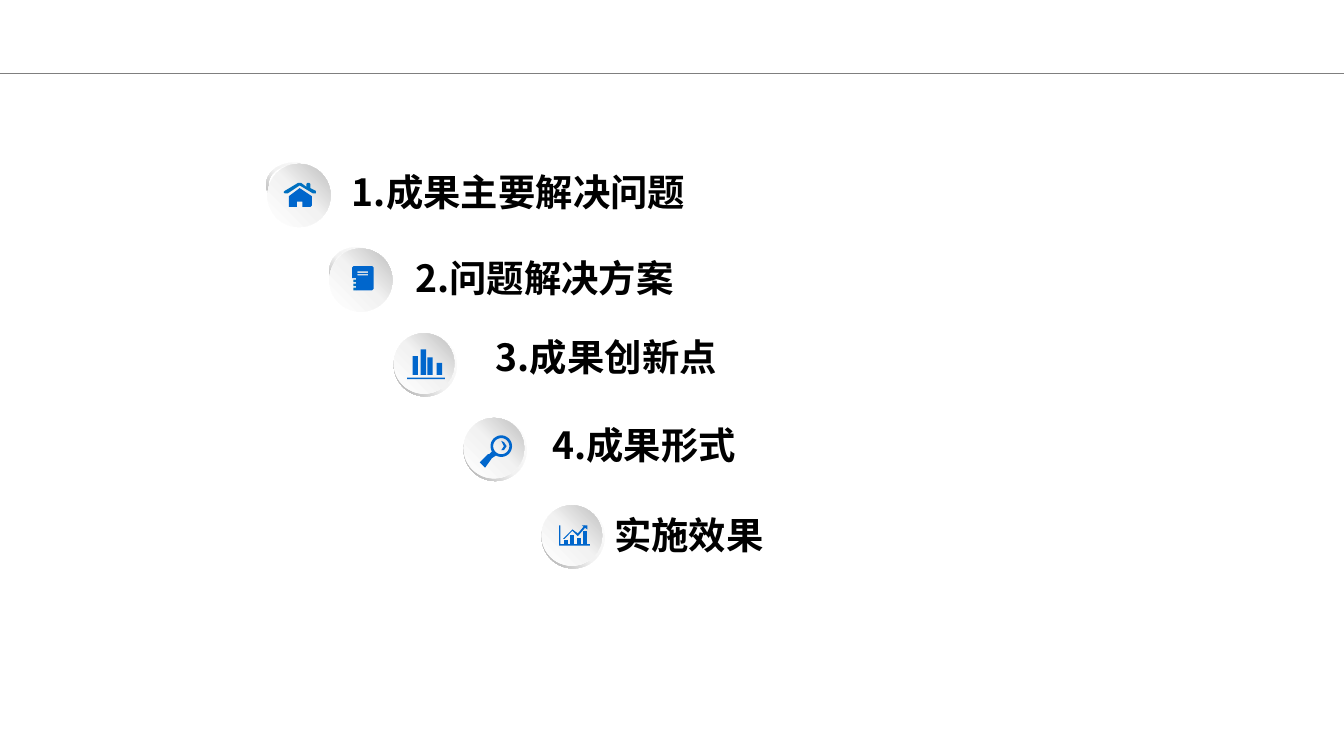
"""Build a contents slide with five staggered entries, each led by a round icon badge."""
from copy import deepcopy
from dataclasses import dataclass
from math import cos, pi, sin

from pptx import Presentation
from pptx import util as u
from pptx.dml.color import RGBColor
from pptx.enum import shapes
from pptx.oxml import ns
from pptx.shapes.autoshape import Shape
from pptx.shapes.shapetree import GroupShapes
from pptx.slide import Slide

Point = tuple[float, float]
Box = tuple[float, float, float, float]
Contour = list[Point]

FONT = "Noto Sans CJK SC"
BLACK = RGBColor(0x00, 0x00, 0x00)
WHITE = RGBColor(0xFF, 0xFF, 0xFF)
PALE = RGBColor(0xF2, 0xF2, 0xF2)
SILVER = RGBColor(0xBF, 0xBF, 0xBF)
GREY = RGBColor(0xA6, 0xA6, 0xA6)
RULE = RGBColor(0x7F, 0x7F, 0x7F)
BLUE = RGBColor(0x00, 0x66, 0xCC)
LIGHT_BLUE = RGBColor(0x00, 0x70, 0xC0)


@dataclass
class Part:
    contours: list[Contour]
    color: RGBColor = BLUE


@dataclass
class Entry:
    label: str
    label_box: Box
    rim: Box
    disc: Box
    icon: list[Part]


def rect(left: float, top: float, width: float, height: float) -> Contour:
    right, bottom = left + width, top + height
    return [(left, top), (right, top), (right, bottom), (left, bottom)]


def circle(cx: float, cy: float, radius: float, steps: int = 48) -> Contour:
    angles = [2 * pi * i / steps for i in range(steps)]
    return [(cx + radius * cos(a), cy + radius * sin(a)) for a in angles]


HOUSE = [
    Part([[(2.15, 1.46), (2.23, 1.4), (2.32, 1.46), (2.32, 1.53), (2.31, 1.54),
           (2.25, 1.54), (2.25, 1.5), (2.21, 1.5), (2.21, 1.54), (2.15, 1.54)]]),
    Part([[(2.11, 1.43), (2.12, 1.42), (2.22, 1.36), (2.24, 1.36), (2.28, 1.39),
           (2.28, 1.37), (2.29, 1.36), (2.3, 1.36), (2.31, 1.37), (2.31, 1.4),
           (2.35, 1.42), (2.35, 1.44), (2.33, 1.44), (2.23, 1.38), (2.14, 1.44),
           (2.12, 1.44)]], LIGHT_BLUE),
]
NOTEBOOK = [
    Part([[(2.63, 1.98), (2.77, 1.98), (2.78, 1.99), (2.78, 2.15), (2.77, 2.16),
           (2.65, 2.16), (2.65, 2.07), (2.62, 2.07), (2.62, 1.99)],
          rect(2.66, 2.02, 0.08, 0.01), rect(2.66, 2.04, 0.08, 0.01)]),
    Part([rect(2.63, top, 0.02, 0.02) for top in (2.08, 2.11, 2.14)], LIGHT_BLUE),
]
BARS = [Part([rect(3.03, 2.81, 0.28, 0.01)] + [
    rect(left, top, 0.04, 2.79 - top)
    for left, top in ((3.07, 2.65), (3.13, 2.6), (3.18, 2.66), (3.25, 2.7))])]
MAGNIFIER = [Part([
    circle(3.73, 3.32, 0.08), circle(3.73, 3.32, 0.06),
    [(3.73, 3.28), (3.75, 3.29), (3.77, 3.32), (3.75, 3.35), (3.73, 3.35),
     (3.75, 3.32)],
    [(3.63, 3.38), (3.64, 3.38), (3.66, 3.36), (3.69, 3.39), (3.66, 3.41),
     (3.61, 3.48), (3.57, 3.44)]])]
GROWTH = [
    Part([[(4.19, 4.01), (4.26, 3.94), (4.3, 3.97), (4.35, 3.91), (4.36, 3.92),
           (4.3, 3.99), (4.26, 3.95), (4.2, 4.01)]]),
    Part([[(4.33, 3.91), (4.37, 3.91), (4.37, 3.94)]]),
    Part([[(4.16, 3.91), (4.17, 3.91), (4.17, 4.05), (4.39, 4.05), (4.39, 4.06),
           (4.16, 4.06)]]),
] + [Part([rect(left, top, 0.03, 4.05 - top)])
     for left, top in ((4.2, 4.02), (4.24, 3.98), (4.29, 4.0), (4.34, 3.95))]

ENTRIES = [
    Entry("1.成果主要解决问题", (2.52, 1.21, 5.32, 0.44),
          (1.98, 1.21, 0.42, 0.33), (1.99, 1.22, 0.47, 0.47), HOUSE),
    Entry("2.问题解决方案", (2.99, 1.85, 3.9, 0.44),
          (2.45, 1.84, 0.4, 0.35), (2.45, 1.85, 0.47, 0.47), NOTEBOOK),
    Entry("3.成果创新点", (3.59, 2.44, 4.65, 0.44),
          (2.93, 2.48, 0.47, 0.47), (2.93, 2.48, 0.45, 0.45), BARS),
    Entry("4.成果形式", (4.01, 3.09, 3.75, 0.44),
          (3.45, 3.11, 0.47, 0.47), (3.45, 3.11, 0.45, 0.45), MAGNIFIER),
    Entry("实施效果", (4.47, 3.76, 4.02, 0.44),
          (4.03, 3.76, 0.47, 0.47), (4.03, 3.76, 0.45, 0.45), GROWTH),
]


def fill_gradient(sp: Shape, stops: list[tuple[float, RGBColor]], angle: float) -> None:
    sp.fill.gradient()
    sp.fill.gradient_angle = angle
    stop_list = sp._element.spPr.find(".//" + ns.qn("a:gsLst"))
    stop_list.append(deepcopy(stop_list[-1]))
    for stop, (position, color) in zip(sp.fill.gradient_stops, stops):
        stop.position = position
        stop.color.rgb = color


def add_round(group: GroupShapes, kind: shapes.MSO_SHAPE, box: Box,
              stops: list[tuple[float, RGBColor]], angle: float) -> Shape:
    sp = group.add_shape(kind, *map(u.Inches, box))
    sp.shadow.inherit = False
    sp.line.fill.background()
    fill_gradient(sp, stops, angle)
    return sp


def add_part(group: GroupShapes, part: Part) -> None:
    outlines = [[(u.Inches(x), u.Inches(y)) for x, y in c] for c in part.contours]
    builder = group.build_freeform(*outlines[0][0])
    builder.add_line_segments(outlines[0][1:])
    for outline in outlines[1:]:
        builder.move_to(*outline[0])
        builder.add_line_segments(outline[1:])
    sp = builder.convert_to_shape()
    sp.shadow.inherit = False
    sp.line.fill.background()
    sp.fill.solid()
    sp.fill.fore_color.rgb = part.color


def add_badge(s: Slide, entry: Entry) -> None:
    group = s.shapes.add_group_shape().shapes
    rim = add_round(group, shapes.MSO_SHAPE.DONUT, entry.rim,
                    [(0, WHITE), (0.55, PALE), (1, GREY)], 225)
    rim.adjustments[0] = 0.05
    add_round(group, shapes.MSO_SHAPE.OVAL, entry.disc,
              [(0, WHITE), (0.51, PALE), (1, SILVER)], 45)
    for part in entry.icon:
        add_part(group, part)


def add_label(s: Slide, entry: Entry) -> None:
    tf = s.shapes.add_textbox(*map(u.Inches, entry.label_box)).text_frame
    tf.word_wrap = True
    r = tf.paragraphs[0].add_run()
    r.text = entry.label
    r.font.size, r.font.bold, r.font.name = u.Pt(20), True, FONT
    r.font.color.rgb = BLACK
    ea = r.font._element.makeelement(ns.qn("a:ea"), {"typeface": FONT})
    r.font._element.find(ns.qn("a:latin")).addnext(ea)


def add_rule(s: Slide, top: float, width: float) -> None:
    line = s.shapes.add_connector(shapes.MSO_CONNECTOR.STRAIGHT, 0, u.Inches(top),
                                  u.Inches(width), u.Inches(top))
    line.line.color.rgb = RULE
    line.line.width = u.Pt(0.5)
    sp_pr = line._element.spPr
    sp_pr.append(sp_pr.makeelement(ns.qn("a:effectLst"), {}))


def main() -> None:
    prs = Presentation()
    prs.slide_width = u.Inches(10)
    prs.slide_height = prs.slide_width * 9 // 16
    s = prs.slides.add_slide(prs.slide_layouts[6])
    add_rule(s, 0.55, 10)
    for entry in ENTRIES:
        add_label(s, entry)
        add_badge(s, entry)
    prs.save("out.pptx")


if __name__ == "__main__":
    main()
